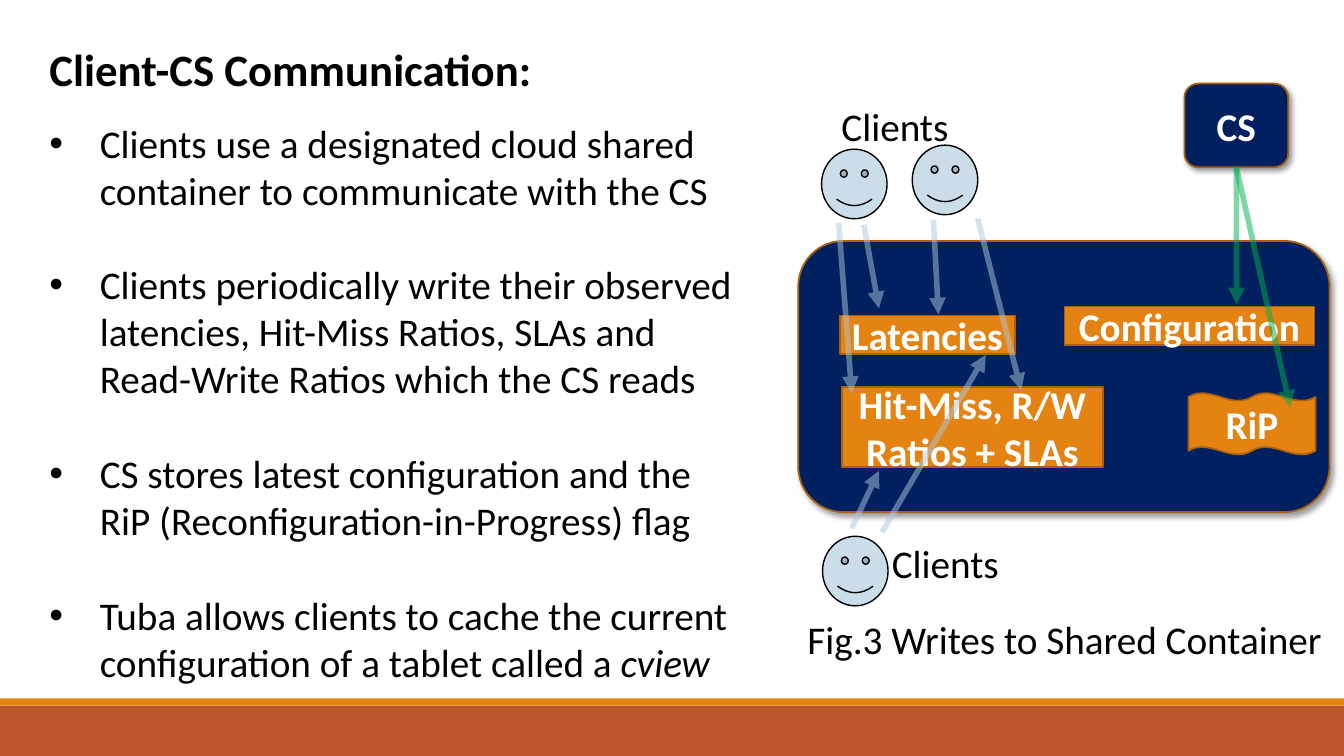
from typing import NamedTuple, Optional

from lxml.etree import SubElement
from pptx import Presentation
from pptx.dml.color import RGBColor
from pptx.enum.shapes import MSO_CONNECTOR as Connector, MSO_SHAPE as Shape
from pptx.enum.text import MSO_ANCHOR as Anchor, MSO_AUTO_SIZE as AutoSize, PP_ALIGN as Align
from pptx.oxml.ns import qn
from pptx.util import Inches, Pt

COLUMNS, ROWS = 40, 22.5
WIDTH, HEIGHT = Inches(13.33), Inches(7.5)
FONT = "Calibri"
COLORS = {
    "footer": "BD582C", "orange": "E48312", "edge": "A9610D", "navy": "002060",
    "face": "CCDDEA", "client": "ADC8DD", "server": "00B050",
    "black": "000000", "white": "FFFFFF",
}


class Area(NamedTuple):
    col: float
    row: float
    cols: float
    rows: float


class Node(NamedTuple):
    area: Area
    fill: str
    kind: Shape = Shape.RECTANGLE
    text: str = ""
    edge: Optional[str] = "edge"
    weight: float = 1.25
    shadow: bool = False


class Label(NamedTuple):
    area: Area
    text: str
    align: Align = Align.LEFT


class Arrow(NamedTuple):
    start: tuple[float, float]
    end: tuple[float, float]
    color: str = "client"


def x(columns: float) -> int:
    return round(WIDTH * columns / COLUMNS)


def y(rows: float) -> int:
    return round(HEIGHT * rows / ROWS)


def box(area: Area) -> tuple[int, int, int, int]:
    return x(area.col), y(area.row), x(area.cols), y(area.rows)


def rgb(name: str) -> RGBColor:
    return RGBColor.from_string(COLORS[name])


def write(paragraph, text: str, *, size=28, color="black", bold=False, italic=False, align=Align.LEFT):
    paragraph.alignment = align
    run = paragraph.add_run()
    run.text = text
    font = run.font
    font.name, font.size, font.bold, font.italic = FONT, Pt(size), bold, italic
    font.color.rgb = rgb(color)


def place(placeholder, area: Area):
    placeholder.left, placeholder.top, placeholder.width, placeholder.height = box(area)
    frame = placeholder.text_frame
    frame.vertical_anchor = Anchor.TOP
    frame.auto_size = AutoSize.NONE
    frame.word_wrap = True
    return frame


def add_bullets(frame, bullets: list[list[tuple[str, bool]]]) -> None:
    for index, pieces in enumerate(bullets):
        paragraph = frame.add_paragraph() if index else frame.paragraphs[0]
        paragraph.space_before = Pt(34 if index else 0)
        properties = paragraph._p.get_or_add_pPr()
        properties.set("marL", str(Inches(0.5)))
        properties.set("indent", str(-Inches(0.5)))
        SubElement(properties, qn("a:buChar"), char="•")
        for text, italic in pieces:
            write(paragraph, text, italic=italic)


def add_shadow(shape) -> None:
    effects = shape._element.spPr.find(qn("a:effectLst"))
    shadow = SubElement(effects, qn("a:outerShdw"), blurRad=str(Pt(4)), dist=str(Pt(3)),
                        dir="2700000", algn="tl", rotWithShape="0")
    color = SubElement(shadow, qn("a:srgbClr"), val=COLORS["black"])
    SubElement(color, qn("a:alpha"), val="40000")


def add_node(slide, node: Node):
    shape = slide.shapes.add_shape(node.kind, *box(node.area))
    shape.shadow.inherit = False
    shape.fill.solid()
    shape.fill.fore_color.rgb = rgb(node.fill)
    if node.edge:
        shape.line.color.rgb = rgb(node.edge)
        shape.line.width = Pt(node.weight)
    else:
        shape.line.fill.background()
    if node.shadow:
        add_shadow(shape)
    if node.text:
        shape.text_frame.word_wrap = True
        shape.text_frame.vertical_anchor = Anchor.MIDDLE
        write(shape.text_frame.paragraphs[0], node.text, color="white", bold=True, align=Align.CENTER)
    return shape


def add_label(slide, label: Label) -> None:
    frame = slide.shapes.add_textbox(*box(label.area)).text_frame
    frame.word_wrap = True
    write(frame.paragraphs[0], label.text, align=label.align)


def add_arrow(slide, arrow: Arrow):
    (start_col, start_row), (end_col, end_row) = arrow.start, arrow.end
    connector = slide.shapes.add_connector(
        Connector.STRAIGHT, x(start_col), y(start_row), x(end_col), y(end_row))
    connector.line.color.rgb = rgb(arrow.color)
    connector.line.width = Pt(4)
    properties = connector._element.spPr
    line = properties.find(qn("a:ln"))
    SubElement(line.find(".//" + qn("a:srgbClr")), qn("a:alpha"), val="50000")
    SubElement(line, qn("a:tailEnd"), type="triangle")
    SubElement(properties, qn("a:effectLst"))
    return connector


FOOTER = [
    Node(Area(0, 21, 40, 1.5), "footer", edge=None),
    Node(Area(0, 20.79, 40, 0.21), "orange", edge=None),
]
BULLETS = [
    [("Clients use a designated cloud shared container to communicate with the CS", False)],
    [("Clients periodically write their observed latencies, Hit-Miss Ratios, SLAs and "
      "Read-Write Ratios which the CS reads", False)],
    [("CS stores latest configuration and the RiP (Reconfiguration-in-Progress) flag", False)],
    [("Tuba allows clients to cache the current configuration of a tablet called a ", False),
     ("cview", True)],
]
CONTAINER = Node(Area(23.76, 7.17, 15.81, 8.07), "navy", Shape.ROUNDED_RECTANGLE, shadow=True)
SERVER = Node(Area(35.25, 2.49, 3.09, 2.49), "navy", Shape.ROUNDED_RECTANGLE, "CS", shadow=True)
CLIENTS = [
    Node(Area(col, row, 1.95, 2.07), "face", Shape.SMILEY_FACE, edge="black", weight=1)
    for col, row in [(24.45, 4.44), (24.48, 15.96), (27.15, 4.32)]
]
STORED = [
    Node(Area(31.68, 9.12, 7.44, 1.14), "orange", text="Configuration"),
    Node(Area(35.37, 11.7, 3.78, 1.83), "orange", Shape.DOUBLE_WAVE, "RiP"),
    Node(Area(24.99, 9.39, 5.22, 1.14), "orange", text="Latencies"),
    Node(Area(25.05, 11.52, 7.77, 2.37), "orange", text="Hit-Miss, R/W Ratios + SLAs"),
]
LABELS = [
    Label(Area(24.75, 2.91, 4.05, 1.71), "Clients"),
    Label(Area(26.25, 15.9, 4.05, 1.71), "Clients"),
    Label(Area(23.13, 18.18, 17.1, 1.71), "Fig.3 Writes to Shared Container", Align.CENTER),
]
CLIENT_WRITES = [
    Arrow((25.35, 15.72), (26.16, 14.01)),
    Arrow((25.71, 6.69), (26.16, 9.18)),
    Arrow((27.78, 6.54), (27.93, 9.36)),
    Arrow((24.96, 6.63), (25.35, 11.7)),
    Arrow((29.1, 6.51), (30.39, 11.61)),
    Arrow((26.25, 15.84), (29.34, 10.56)),
]
SERVER_WRITES = [
    Arrow((36.8, 4.98), end, "server") for end in [(36.8, 9.06), (38.4, 12.12)]
]


def main() -> None:
    deck = Presentation()
    deck.slide_width, deck.slide_height = WIDTH, HEIGHT
    slide = deck.slides.add_slide(deck.slide_layouts[1])
    heading = place(slide.shapes.title, Area(1.17, 1.08, 37.2, 1.92))
    write(heading.paragraphs[0], "Client-CS Communication:", size=32, bold=True)
    add_bullets(place(slide.placeholders[1], Area(1.17, 3.39, 20.97, 18.69)), BULLETS)
    for node in [*FOOTER, CONTAINER, *CLIENTS, *STORED]:
        add_node(slide, node)
    server = add_node(slide, SERVER)
    for label in LABELS:
        add_label(slide, label)
    for arrow in CLIENT_WRITES:
        add_arrow(slide, arrow)
    for arrow in SERVER_WRITES:
        add_arrow(slide, arrow).begin_connect(server, 2)
    deck.save("out.pptx")


if __name__ == "__main__":
    main()
